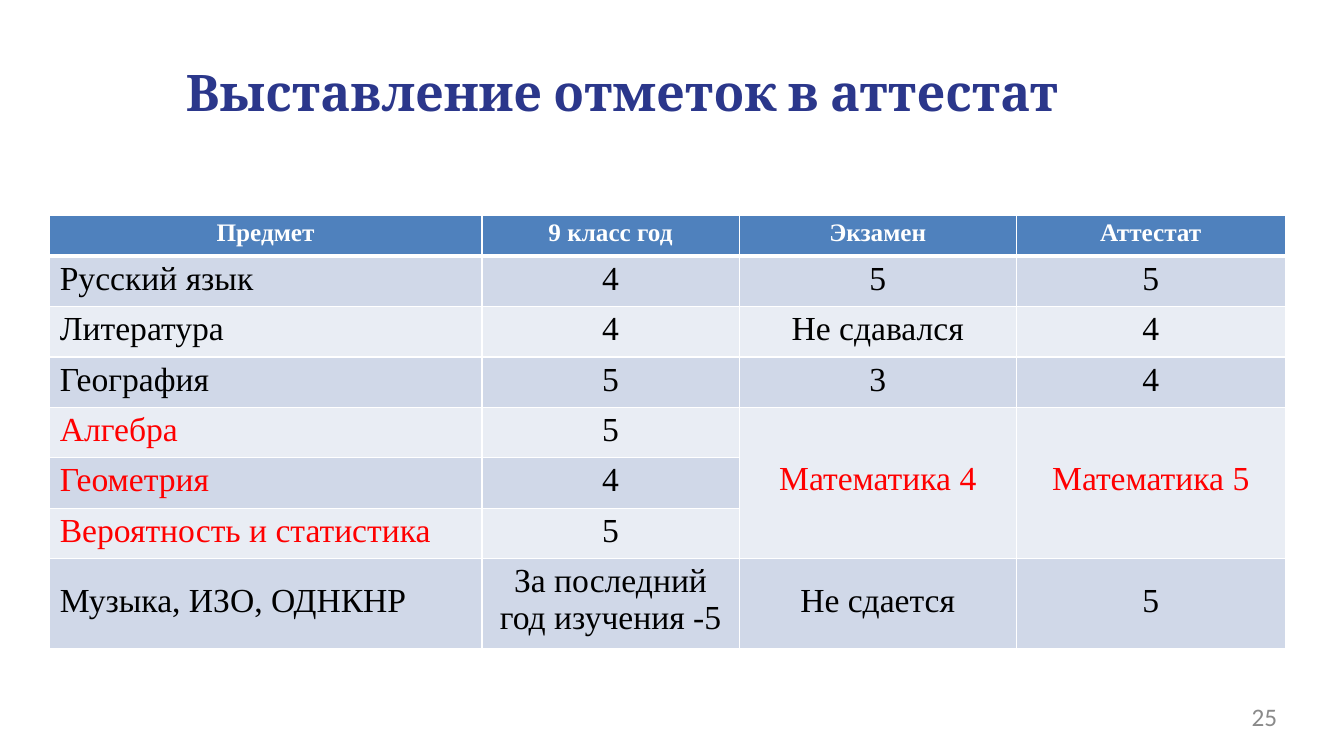
from dataclasses import dataclass

from lxml.etree import SubElement
from pptx import Presentation
from pptx.dml.color import RGBColor as Rgb
from pptx.enum.text import MSO_AUTO_SIZE as AutoSize, PP_ALIGN as Align
from pptx.oxml.ns import qn
from pptx.util import Emu, Pt


@dataclass(frozen=True)
class Theme:
    title: str = "2B378B"
    number: str = "8A8A8A"
    header: str = "4F81BD"
    bands: tuple = ("E9EDF4", "D0D8E8")
    white: str = "FFFFFF"
    body: str = "000000"
    accent: str = "FF0000"
    title_size: int = 36
    body_size: int = 24
    small_size: int = 18
    title_font: str = "Cambria"
    table_font: str = "Times New Roman"
    number_font: str = "Calibri"


def px(value):
    return Emu(value * 9525)


def assign(target, values):
    for name, value in values.items():
        setattr(target, name, value)


class SlideBuilder:
    def __init__(self, presentation, theme):
        self.theme = theme
        self.slide = presentation.slides.add_slide(presentation.slide_layouts[6])

    def styled_run(self, paragraph, text, font, size, color, bold=False, align=Align.LEFT):
        paragraph.alignment = align
        run = paragraph.add_run()
        run.text = text
        assign(run.font, {"name": font, "size": Pt(size), "bold": bold})
        run.font.color.rgb = Rgb.from_string(color)

    def text(self, box, text, margins, line_spacing=None, **style):
        shape = self.slide.shapes.add_textbox(*map(px, box))
        frame = shape.text_frame
        left, top = margins
        assign(frame, {
            "word_wrap": True, "auto_size": AutoSize.NONE,
            "margin_left": px(left), "margin_top": px(top),
            "margin_right": 0, "margin_bottom": 0,
        })
        paragraph = frame.paragraphs[0]
        if line_spacing:
            paragraph.line_spacing = Pt(line_spacing)
        self.styled_run(paragraph, text, **style)

    def border(self, cell, widths):
        properties = cell._tc.get_or_add_tcPr()
        for side, width in widths.items():
            line = SubElement(properties, qn(f"a:ln{side}"), w=str(Pt(width)))
            fill = SubElement(line, qn("a:solidFill"))
            SubElement(fill, qn("a:srgbClr"), val=self.theme.white)

    def cell(self, cell, text, row, column, top, side):
        theme = self.theme
        header = row == 0
        self.border(cell, {
            "L": 1, "R": 1, "T": 3 if row == 1 else 1, "B": 3 if header else 1,
        })
        cell.fill.solid()
        fill = theme.header if header else theme.bands[row % 2]
        cell.fill.fore_color.rgb = Rgb.from_string(fill)
        assign(cell, {
            "margin_left": px(side), "margin_right": px(side),
            "margin_top": px(top), "margin_bottom": 0,
        })
        if not text:
            return
        accent = text.startswith("Математика") or (column == 0 and row in MATH_ROWS)
        color = theme.white if header else theme.accent if accent else theme.body
        self.styled_run(
            cell.text_frame.paragraphs[0], text, theme.table_font,
            theme.small_size if header else theme.body_size, color, header,
            Align.LEFT if column == 0 and not header else Align.CENTER,
        )

    def table(self, left, top, widths, heights, rows):
        frame = self.slide.shapes.add_table(
            len(rows), len(widths), px(left), px(top), px(sum(widths)), px(sum(heights)))
        table = frame.table
        for column, width in zip(table.columns, widths):
            column.width = px(width)
        for row, height in zip(table.rows, heights):
            row.height = px(height)
        last = len(rows) - 1
        for row, texts in enumerate(rows):
            for column, text in enumerate(texts):
                if text.startswith("Математика"):
                    inset = 51
                else:
                    inset = 23 if row == last and column != 1 else 4
                side = 10 if column == 0 and row else 0
                if row == last and column == 1:
                    side = 12
                self.cell(table.cell(row, column), text, row, column, inset, side)
        for column in (2, 3):
            table.cell(MATH_ROWS[0], column).merge(table.cell(MATH_ROWS[-1], column))


MATH_ROWS = (4, 5, 6)
GRADES = [
    ("Предмет", "9 класс год", "Экзамен", "Аттестат"),
    ("Русский язык", "4", "5", "5"),
    ("Литература", "4", "Не сдавался", "4"),
    ("География", "5", "3", "4"),
    ("Алгебра", "5", "Математика 4", "Математика 5"),
    ("Геометрия", "4", "", ""),
    ("Вероятность и статистика", "5", "", ""),
    ("Музыка, ИЗО, ОДНКНР", "За последний год изучения -5", "Не сдается", "5"),
]


def main():
    presentation = Presentation()
    assign(presentation, {"slide_width": px(1280), "slide_height": px(720)})
    theme = Theme()
    builder = SlideBuilder(presentation, theme)
    builder.text(
        (1188, 673, 33, 27), "25", (4, 0), line_spacing=18.1,
        font=theme.number_font, size=theme.small_size, color=theme.number)
    builder.table(47, 205, (412, 245, 264, 256), (39, *[48] * 6, 86), GRADES)
    builder.text(
        (176, 57, 992, 60), "Выставление отметок в аттестат", (1, 1),
        font=theme.title_font, size=theme.title_size, color=theme.title, bold=True)
    presentation.save("out.pptx")


if __name__ == "__main__":
    main()
